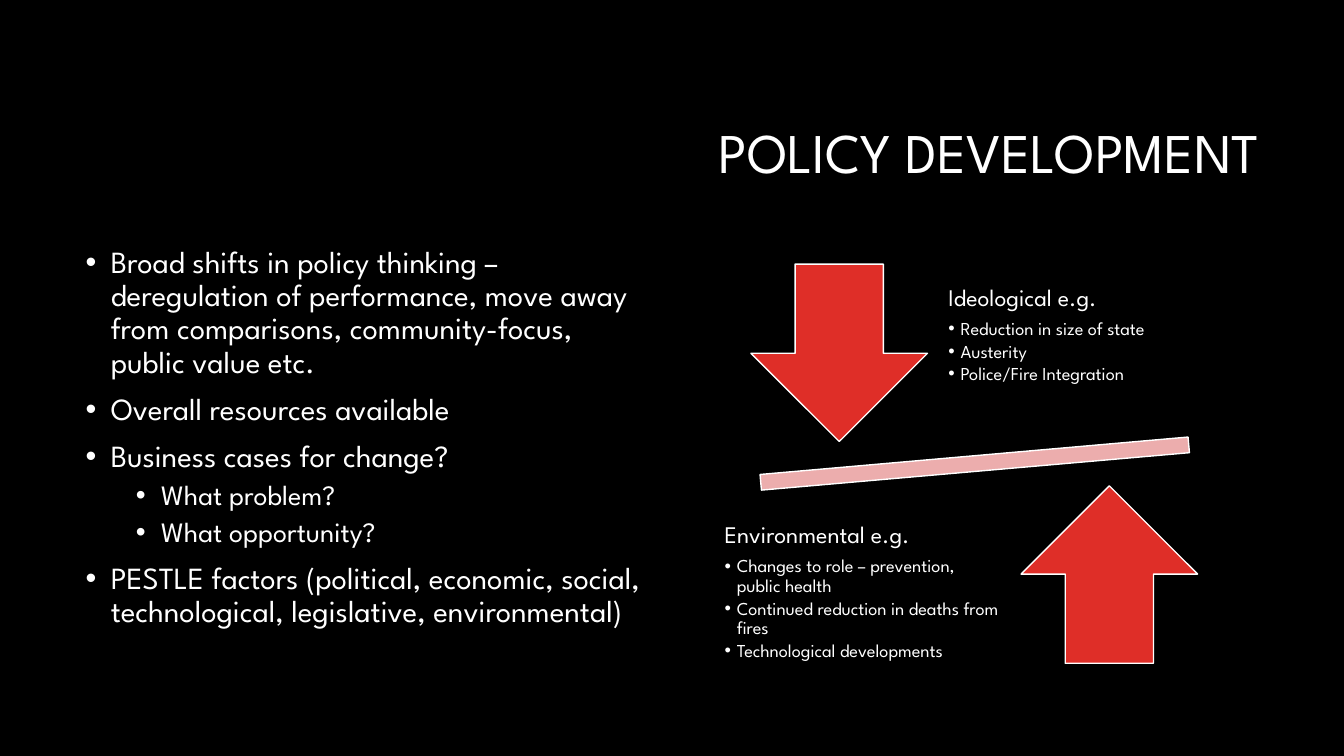
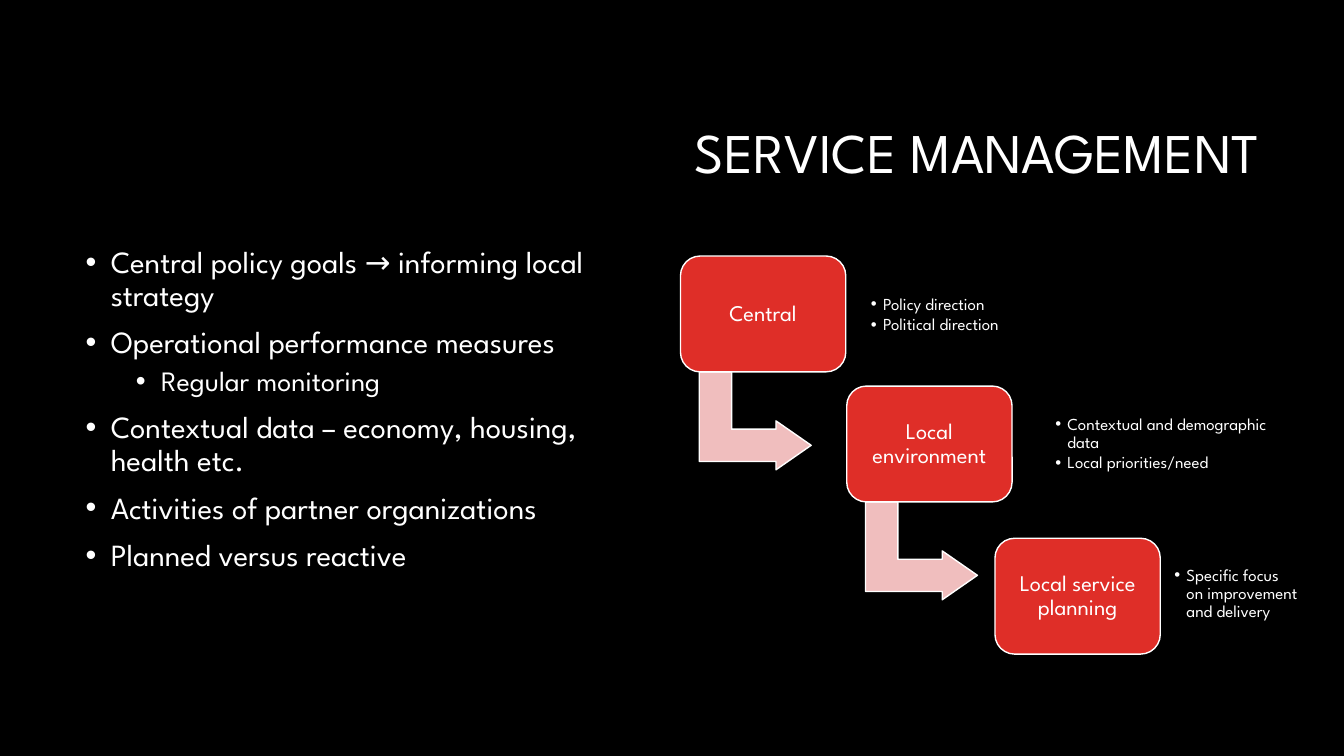
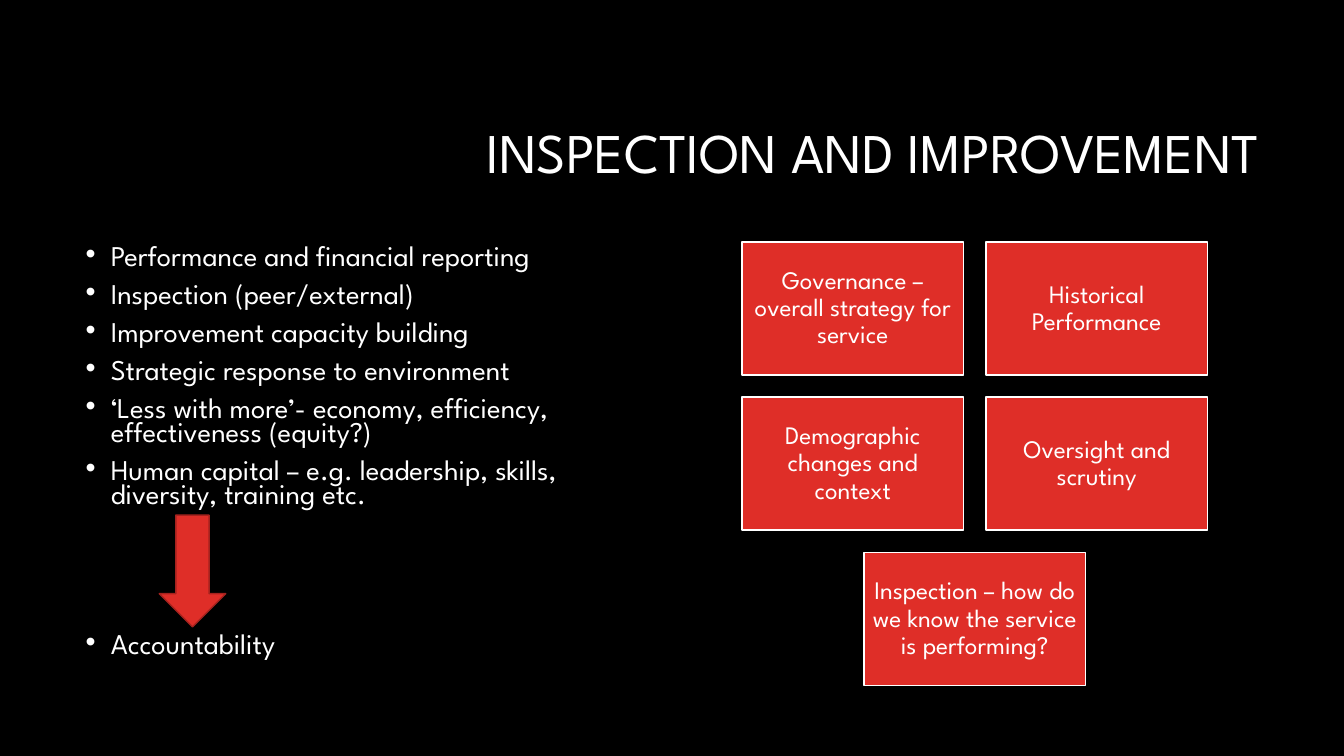
import collections

import lxml.etree
import pptx
import pptx.dml.color
import pptx.enum.shapes
import pptx.enum.text
import pptx.oxml.ns
import pptx.util

BLACK = pptx.dml.color.RGBColor(0x00, 0x00, 0x00)
WHITE = pptx.dml.color.RGBColor(0xFF, 0xFF, 0xFF)
RED = pptx.dml.color.RGBColor(0xDF, 0x2E, 0x28)
DARK_RED = pptx.dml.color.RGBColor(0xA5, 0x22, 0x1E)
PINK = pptx.dml.color.RGBColor(0xEC, 0xAD, 0xAD)
PALE_PINK = pptx.dml.color.RGBColor(0xF0, 0xBE, 0xBE)
FONT = "League Spartan"

SHAPE = pptx.enum.shapes.MSO_SHAPE
ALIGN = pptx.enum.text.PP_ALIGN
MIDDLE = pptx.enum.text.MSO_ANCHOR.MIDDLE

Style = collections.namedtuple(
    "Style", "size align level left hang before after spacing",
    defaults=(ALIGN.LEFT, 0, 0, 0, 0, 0, 0.9))
TITLE = Style(40, ALIGN.RIGHT)
POINT = Style(22, left=0.25, hang=0.25, before=10)
SUBPOINT = Style(20, level=1, left=0.75, hang=0.25, before=5)
TIGHT_POINT = POINT._replace(size=20.4, spacing=0.7)
FAR_POINT = TIGHT_POINT._replace(before=90)
FORCE_HEADING = Style(17, after=6)
FORCE_POINT = Style(13, level=1, left=0.12, hang=0.12, after=2)
STEP = Style(16, ALIGN.CENTER)
STEP_NOTE = FORCE_POINT._replace(size=12, after=1.8)
CARD = Style(18, ALIGN.CENTER)

deck = pptx.Presentation()
deck.slide_width = pptx.util.Inches(13.33)
deck.slide_height = pptx.util.Inches(7.5)
deck.slide_master.background.fill.solid()
deck.slide_master.background.fill.fore_color.rgb = BLACK
COLUMN = deck.slide_width / 100
ROW = deck.slide_height / 100
TOP = 32


def write(slide, area, lines, anchor=MIDDLE, inset=None, holder=None):
    left, top, width, height = area
    if holder is None:
        holder = slide.shapes.add_textbox(
            int(left * COLUMN), int(top * ROW), int(width * COLUMN), int(height * ROW))
    frame = holder.text_frame
    frame.word_wrap = True
    frame.vertical_anchor = anchor
    if inset is not None:
        frame.margin_left = frame.margin_right = pptx.util.Inches(inset)
        frame.margin_top = frame.margin_bottom = pptx.util.Inches(inset)
    for index, (text, style) in enumerate(lines):
        paragraph = frame.add_paragraph() if index else frame.paragraphs[0]
        paragraph.text = text
        paragraph.alignment = style.align
        paragraph.level = style.level
        paragraph.line_spacing = style.spacing
        paragraph.space_before = pptx.util.Pt(style.before if index else 0)
        paragraph.space_after = pptx.util.Pt(style.after)
        if style.hang:
            properties = paragraph._p.get_or_add_pPr()
            properties.set("marL", str(pptx.util.Inches(style.left)))
            properties.set("indent", str(-pptx.util.Inches(style.hang)))
            for tag, key, value in (("a:buFont", "typeface", "Arial"), ("a:buChar", "char", "•")):
                lxml.etree.SubElement(properties, pptx.oxml.ns.qn(tag)).set(key, value)
        paragraph.font.name = FONT
        paragraph.font.size = pptx.util.Pt(style.size)
        paragraph.font.color.rgb = WHITE


def draw(slide, kind, area, fill=RED, line=WHITE, rotation=0, adjustments=()):
    left, top, width, height = area
    shape = slide.shapes.add_shape(
        kind, int(left * COLUMN), int(top * ROW), int(width * COLUMN), int(height * ROW))
    shape.shadow.inherit = False
    shape.fill.solid()
    shape.fill.fore_color.rgb = fill
    shape.line.color.rgb = line
    shape.line.width = pptx.util.Pt(1)
    shape.rotation = rotation
    for index, value in enumerate(adjustments):
        shape.adjustments[index] = value
    return shape


outlines = [
    ("POLICY DEVELOPMENT", [
        ("Broad shifts in policy thinking – deregulation of performance, move away "
         "from comparisons, community-focus, public value etc.", POINT),
        ("Overall resources available", POINT),
        ("Business cases for change?", POINT),
        ("What problem?", SUBPOINT),
        ("What opportunity?", SUBPOINT),
        ("PESTLE factors (political, economic, social, technological, legislative, "
         "environmental)", POINT)]),
    ("SERVICE MANAGEMENT", [
        ("Central policy goals → informing local strategy", POINT),
        ("Operational performance measures", POINT),
        ("Regular monitoring", SUBPOINT),
        ("Contextual data – economy, housing, health etc.", POINT),
        ("Activities of partner organizations", POINT),
        ("Planned versus reactive", POINT)]),
    ("INSPECTION AND IMPROVEMENT", [
        ("Performance and financial reporting", TIGHT_POINT),
        ("Inspection (peer/external)", TIGHT_POINT),
        ("Improvement capacity building", TIGHT_POINT),
        ("Strategic response to environment", TIGHT_POINT),
        ("‘Less with more’- economy, efficiency, effectiveness (equity?)", TIGHT_POINT),
        ("Human capital – e.g. leadership, skills, diversity, training etc.", TIGHT_POINT),
        ("Accountability", FAR_POINT)]),
]
slides = []
for title, points in outlines:
    slide = deck.slides.add_slide(deck.slide_layouts[6])
    write(slide, (23.78, 11.2, 70.65, 18.8), [(title, TITLE)])
    write(slide, (5.63, TOP, 43.73, 58.67), points, pptx.enum.text.MSO_ANCHOR.TOP)
    slides.append(slide)
policy, service, inspection = slides

draw(policy, SHAPE.MATH_MINUS, (50.78, 56.93, 43.5, 8.8), PINK, rotation=355)
forces = [
    (SHAPE.DOWN_ARROW, (55.88, 34.93), (69.6, TOP), "Ideological e.g.",
     ["Reduction in size of state", "Austerity", "Police/Fire Integration"]),
    (SHAPE.UP_ARROW, (75.98, 64.27), (52.95, 66), "Environmental e.g.",
     ["Changes to role – prevention, public health",
      "Continued reduction in deaths from fires", "Technological developments"]),
]
for arrow, arrow_corner, text_corner, heading, examples in forces:
    draw(policy, arrow, (*arrow_corner, 13.13, 23.47))
    write(policy, (*text_corner, 22.5, 24.67),
          [(heading, FORCE_HEADING)] + [(example, FORCE_POINT) for example in examples],
          inset=0.13)

steps = [
    ("Central", (50.63, 33.87), (64.28, 35.47, 17.7, 12.4),
     ["Policy direction", "Political direction"]),
    ("Local environment", (63, 51.07), (78, 52.53, 18, 12.4),
     ["Contextual and demographic data", "Local priorities/need"]),
    ("Local service planning", (74.03, 71.2), (86.85, 68.27, 10.35, 20.67),
     ["Specific focus on improvement and delivery"]),
]
for number, (label, (left, top), note_area, notes) in enumerate(steps, 1):
    if number < len(steps):
        draw(service, SHAPE.BENT_UP_ARROW, (left + 1.92, top + 14.4, 7.28, 14.8),
             PALE_PINK, rotation=90, adjustments=(0.33, 0.25, 0.36))
    step_area = (left, top, 12.3, 15.33)
    step = draw(service, SHAPE.ROUNDED_RECTANGLE, step_area, adjustments=(0.17,))
    write(service, step_area, [(label, STEP)], inset=0.07, holder=step)
    write(service, note_area, [(note, STEP_NOTE) for note in notes], inset=0.07)

cards = [
    (0, 0, "Governance – overall strategy for service"),
    (1, 0, "Historical Performance"),
    (0, 1, "Demographic changes and context"),
    (1, 1, "Oversight and scrutiny"),
    (0.5, 2, "Inspection – how do we know the service is performing?"),
]
for across, down, label in cards:
    card_area = (55.2 + across * 18.15, TOP + down * 20.53, 16.5, 17.6)
    card = draw(inspection, SHAPE.RECTANGLE, card_area)
    write(inspection, card_area, [(label, CARD)], inset=0.07, holder=card)
draw(inspection, SHAPE.DOWN_ARROW, (11.85, 68.13, 4.95, 14.8), line=DARK_RED)

deck.save("out.pptx")
